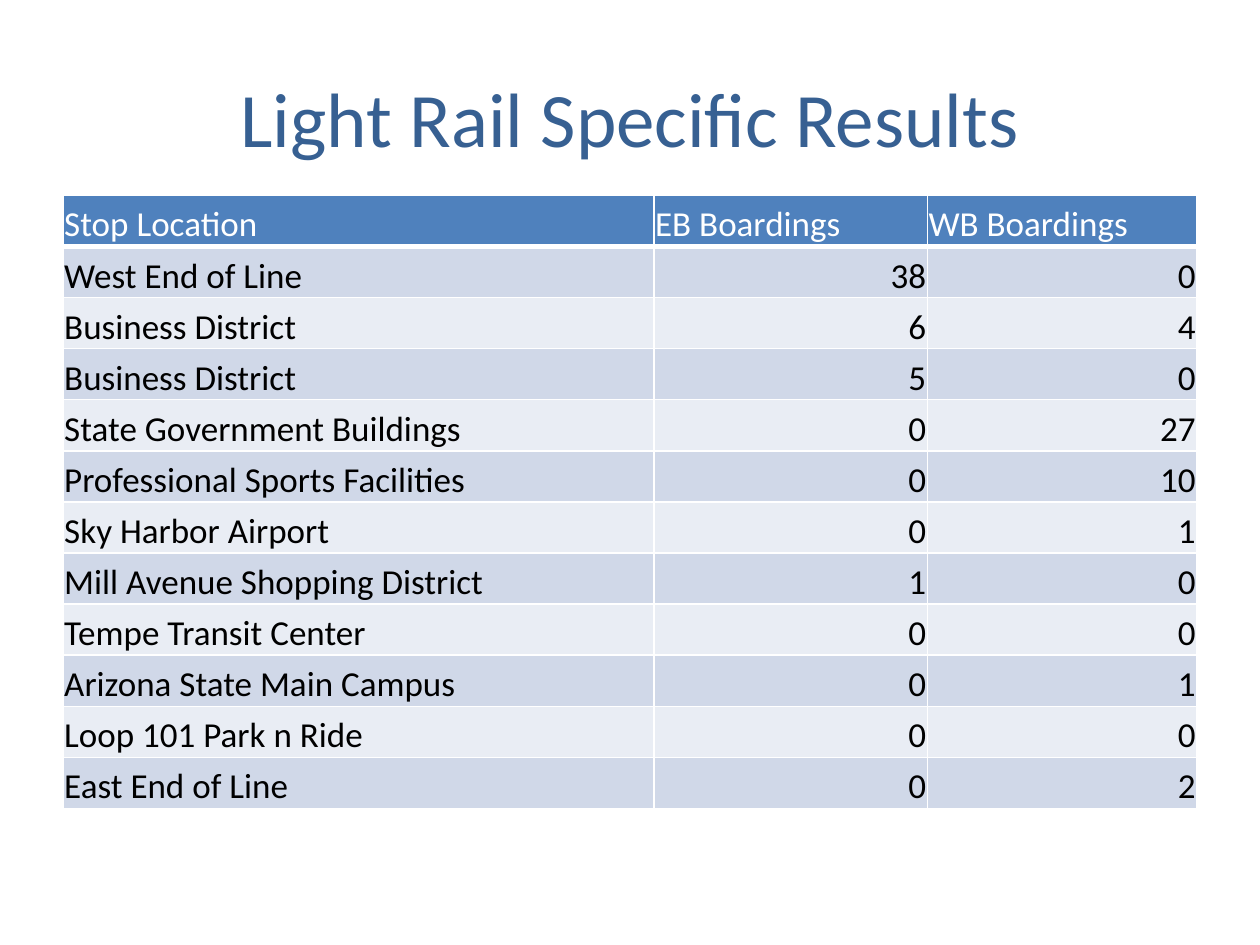
from lxml import etree
from pptx import Presentation
from pptx.dml.color import RGBColor
from pptx.enum import text
from pptx.oxml.ns import qn
from pptx.util import Inches, Pt

FONT = "Calibri"
WHITE, BLACK = "FFFFFF", "000000"
TITLE_BLUE, HEADER_BLUE = "376092", "4F81BD"
BANDS = ("D0D8E8", "E9EDF4")

COLUMN_WIDTHS = (4.69, 2.17, 2.14)
TABLE_HEIGHT = 4.87
HEADER = ("Stop Location", "EB Boardings", "WB Boardings")
STOPS = (
    ("West End of Line", 38, 0),
    ("Business District", 6, 4),
    ("Business District", 5, 0),
    ("State Government Buildings", 0, 27),
    ("Professional Sports Facilities", 0, 10),
    ("Sky Harbor Airport", 0, 1),
    ("Mill Avenue Shopping District", 1, 0),
    ("Tempe Transit Center", 0, 0),
    ("Arizona State Main Campus", 0, 1),
    ("Loop 101 Park n Ride", 0, 0),
    ("East End of Line", 0, 2),
)


def color(value):
    return RGBColor.from_string(value)


def write(frame, content, size, ink, align):
    para = frame.paragraphs[0]
    para.text = str(content)
    para.alignment = align
    para.font.name = FONT
    para.font.size = Pt(size)
    para.font.color.rgb = color(ink)


def add_title(page, content):
    box = page.shapes.add_textbox(Inches(0.5), Inches(0.3), Inches(9), Inches(1.25))
    frame = box.text_frame
    frame.word_wrap = True
    frame.vertical_anchor = text.MSO_ANCHOR.MIDDLE
    write(frame, content, 44, TITLE_BLUE, text.PP_ALIGN.CENTER)


def set_borders(cell, top, bottom):
    """Draw white cell edges; top and bottom are widths in points."""
    properties = cell._tc.get_or_add_tcPr()
    edges = (("a:lnL", 1), ("a:lnR", 1), ("a:lnT", top), ("a:lnB", bottom))
    for position, (tag, width) in enumerate(edges):
        line = etree.Element(qn(tag), w=str(Pt(width)))
        fill = etree.SubElement(line, qn("a:solidFill"))
        etree.SubElement(fill, qn("a:srgbClr"), val=WHITE)
        properties.insert(position, line)


def style_cell(cell, fill):
    cell.margin_left = cell.margin_right = cell.margin_top = Inches(0.01)
    cell.margin_bottom = 0
    cell.vertical_anchor = text.MSO_ANCHOR.BOTTOM
    cell.fill.solid()
    cell.fill.fore_color.rgb = color(fill)


def add_boardings_table(page):
    rows = (HEADER,) + STOPS
    table = page.shapes.add_table(
        len(rows), len(HEADER), Inches(0.5), Inches(1.55),
        Inches(sum(COLUMN_WIDTHS)), Inches(TABLE_HEIGHT)).table
    for column, width in zip(table.columns, COLUMN_WIDTHS):
        column.width = Inches(width)
    for r, values in enumerate(rows):
        is_header = r == 0
        fill = HEADER_BLUE if is_header else BANDS[(r - 1) % 2]
        for c, value in enumerate(values):
            cell = table.cell(r, c)
            style_cell(cell, fill)
            set_borders(cell, top=3 if r == 1 else 1, bottom=3 if is_header else 1)
            is_number = isinstance(value, int)
            align = text.PP_ALIGN.RIGHT if is_number else text.PP_ALIGN.LEFT
            write(cell.text_frame, value, 20, WHITE if is_header else BLACK, align)
            if is_header:
                cell.text_frame.paragraphs[0].font.bold = False


def main():
    deck = Presentation()
    deck.slide_width, deck.slide_height = Inches(10), Inches(7.5)
    page = deck.slides.add_slide(deck.slide_layouts[6])
    add_title(page, "Light Rail Specific Results")
    add_boardings_table(page)
    deck.save("out.pptx")


if __name__ == "__main__":
    main()
